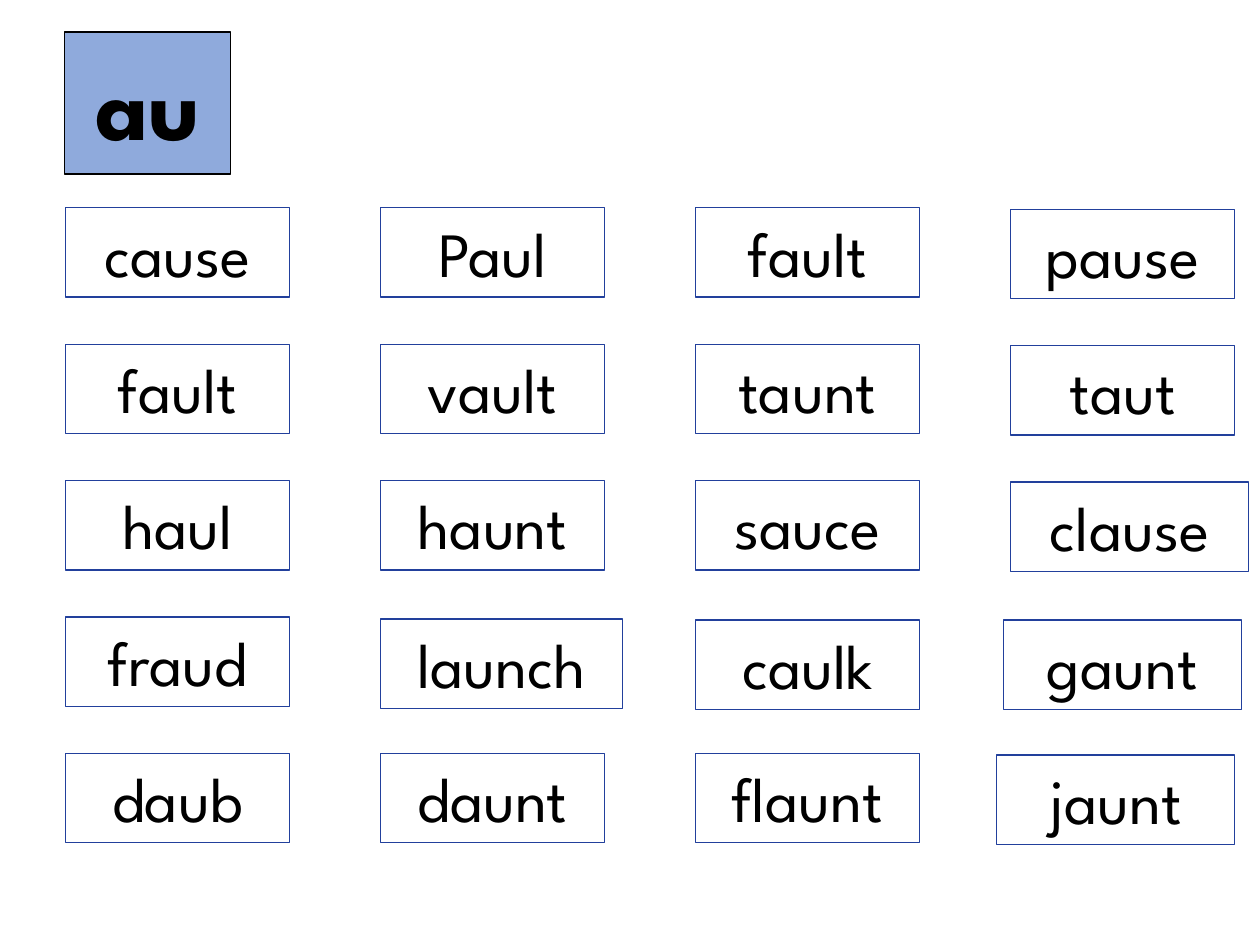
from pptx import Presentation
from pptx.dml.color import RGBColor
from pptx.enum.shapes import MSO_SHAPE
from pptx.enum.text import MSO_ANCHOR, MSO_AUTO_SIZE, PP_ALIGN
from pptx.util import Cm, Pt

RECT = MSO_SHAPE.RECTANGLE
TOP, MIDDLE = MSO_ANCHOR.TOP, MSO_ANCHOR.MIDDLE
CENTER = PP_ALIGN.CENTER
FIT, FIXED = MSO_AUTO_SIZE.SHAPE_TO_FIT_TEXT, MSO_AUTO_SIZE.NONE

BLACK = RGBColor(0x00, 0x00, 0x00)
NAVY = RGBColor(0x22, 0x40, 0x9C)
BLUE = RGBColor(0x8F, 0xAA, 0xDC)
FONT = "League Spartan"

# Word grid, in centimetres
LEFT, ACROSS = 1.32, 6.35
UPPER, DOWN = 4.19, 2.75
WIDTH, HEIGHT = 4.52, 1.8
WORDS = [
    ["cause", "Paul", "fault", "pause"],
    ["fault", "vault", "taunt", "taut"],
    ["haul", "haunt", "sauce", "clause"],
    ["fraud", "launch", "caulk", "gaunt"],
    ["daub", "daunt", "flaunt", "jaunt"],
]
# Cards off the grid: shift right, shift down, extra width
SHIFTS = {
    "pause": (0, 0.03, 0),
    "taut": (0, 0.03, 0),
    "clause": (0, 0.03, 0.28),
    "launch": (0, 0.04, 0.36),
    "caulk": (0, 0.06, 0),
    "gaunt": (-0.14, 0.06, 0.28),
    "jaunt": (-0.28, 0.03, 0.28),
}


def write(frame, text, size=36, bold=False, color=BLACK):
    para = frame.paragraphs[0]
    para.alignment = CENTER
    run = para.add_run()
    run.text = text
    run.font.name = FONT
    run.font.size = Pt(size)
    run.font.bold = bold
    run.font.color.rgb = color


class Sheet:
    def __init__(self, slide):
        self.slide = slide

    def box(self, x, y, w, h, line, weight, anchor, fit):
        shape = self.slide.shapes.add_shape(RECT, Cm(x), Cm(y), Cm(w), Cm(h))
        shape.shadow.inherit = False
        shape.fill.background()
        shape.line.color.rgb = line
        shape.line.width = Pt(weight)
        frame = shape.text_frame
        frame.word_wrap = True
        frame.vertical_anchor = anchor
        frame.auto_size = fit
        return shape

    def card(self, word, x, y, w):
        shape = self.box(x, y, w, HEIGHT, NAVY, 0.75, TOP, FIT)
        write(shape.text_frame, word)

    def title(self, text, x, y, w, h):
        shape = self.box(x, y, w, h, BLACK, 1, MIDDLE, FIXED)
        shape.fill.solid()
        shape.fill.fore_color.rgb = BLUE
        write(shape.text_frame, text, size=54, bold=True)


def main():
    deck = Presentation()
    deck.slide_width, deck.slide_height = Cm(25.4), Cm(19.05)
    sheet = Sheet(deck.slides.add_slide(deck.slide_layouts[6]))

    # Word cards
    for row, words in enumerate(WORDS):
        for col, word in enumerate(words):
            right, drop, extra = SHIFTS.get(word, (0, 0, 0))
            sheet.card(word, LEFT + col * ACROSS + right,
                       UPPER + row * DOWN + drop, WIDTH + extra)

    # Sound tile
    sheet.title("au", 1.3, 0.64, 3.35, 2.87)

    deck.save("out.pptx")


if __name__ == "__main__":
    main()
